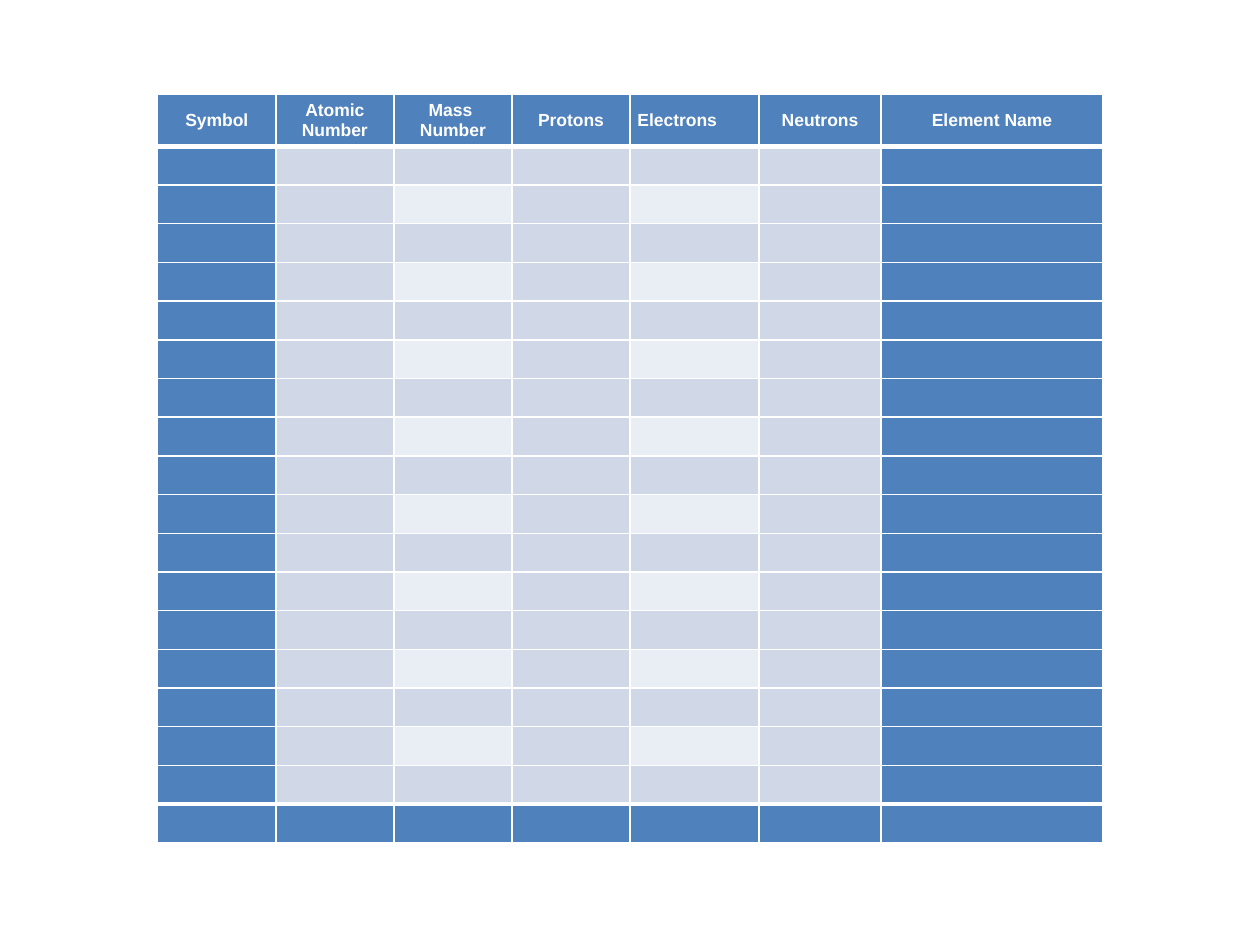
from dataclasses import dataclass

from lxml import etree
from pptx import Presentation
from pptx import util as u
from pptx.dml.color import RGBColor
from pptx.enum import text
from pptx.oxml import ns
from pptx.table import _Cell

BLUE = RGBColor(0x4F, 0x81, 0xBD)
BAND = RGBColor(0xD0, 0xD8, 0xE8)
PALE = RGBColor(0xE9, 0xED, 0xF4)
WHITE = RGBColor(0xFF, 0xFF, 0xFF)

ELEMENT_ROWS = 17
HEADING_HEIGHT = u.Cm(1.04)
ELEMENT_HEIGHT = u.Cm(0.78)
THIN, THICK = u.Pt(1), u.Pt(3)

CELL_FORMAT = {
    "margin_left": u.Cm(0.15),
    "margin_right": u.Cm(0.15),
    "margin_top": 0,
    "margin_bottom": 0,
    "vertical_anchor": text.MSO_ANCHOR.MIDDLE,
}
HEADING_FONT = {"name": "Arial", "size": u.Pt(10), "bold": True}


@dataclass(frozen=True)
class Property:
    heading: str
    width: u.Length = u.Cm(2.38)
    align: text.PP_ALIGN = text.PP_ALIGN.CENTER


PROPERTIES = [
    Property("Symbol"),
    Property("Atomic Number"),
    Property("Mass \nNumber"),
    Property("Protons"),
    Property("Electrons", u.Cm(2.6), text.PP_ALIGN.LEFT),
    Property("Neutrons", u.Cm(2.46)),
    Property("Element Name", u.Cm(4.47)),
]


def apply_format(target: object, values: dict) -> None:
    for name, value in values.items():
        setattr(target, name, value)


def draw_borders(cell: _Cell, top: int, bottom: int) -> None:
    properties = cell._tc.get_or_add_tcPr()
    widths = {"a:lnL": THIN, "a:lnR": THIN, "a:lnT": top, "a:lnB": bottom}
    for position, (tag, width) in enumerate(widths.items()):
        border = etree.Element(ns.qn(tag), w=str(int(width)))
        fill = etree.SubElement(border, ns.qn("a:solidFill"))
        etree.SubElement(fill, ns.qn("a:srgbClr"), val=str(WHITE))
        properties.insert(position, border)


def cell_color(row: int, column: int) -> RGBColor:
    if row in (0, ELEMENT_ROWS + 1) or column in (0, len(PROPERTIES) - 1):
        return BLUE
    return BAND if row % 2 or column % 2 else PALE


def draw_cell(cell: _Cell, row: int, column: int) -> None:
    apply_format(cell, CELL_FORMAT)
    cell.fill.solid()
    cell.fill.fore_color.rgb = cell_color(row, column)
    draw_borders(
        cell,
        top=THICK if row in (1, ELEMENT_ROWS + 1) else THIN,
        bottom=THICK if row in (0, ELEMENT_ROWS) else THIN,
    )


def write_heading(cell: _Cell, prop: Property) -> None:
    cell.text_frame.text = prop.heading
    for paragraph in cell.text_frame.paragraphs:
        paragraph.alignment = prop.align
        for run in paragraph.runs:
            apply_format(run.font, HEADING_FONT)
            run.font.color.rgb = WHITE


def main() -> None:
    deck = Presentation()
    deck.slide_width, deck.slide_height = u.Cm(25.4), u.Cm(19.05)
    slide = deck.slides.add_slide(deck.slide_layouts[6])

    row_count = ELEMENT_ROWS + 2
    atoms = slide.shapes.add_table(
        row_count,
        len(PROPERTIES),
        u.Cm(3.18),
        u.Cm(1.91),
        sum(prop.width for prop in PROPERTIES),
        HEADING_HEIGHT + ELEMENT_HEIGHT * (row_count - 1),
    ).table

    for row, line in enumerate(atoms.rows):
        line.height = ELEMENT_HEIGHT if row else HEADING_HEIGHT
        for column, cell in enumerate(line.cells):
            draw_cell(cell, row, column)
    for column, prop in enumerate(PROPERTIES):
        atoms.columns[column].width = prop.width
        write_heading(atoms.cell(0, column), prop)

    deck.save("out.pptx")


if __name__ == "__main__":
    main()
